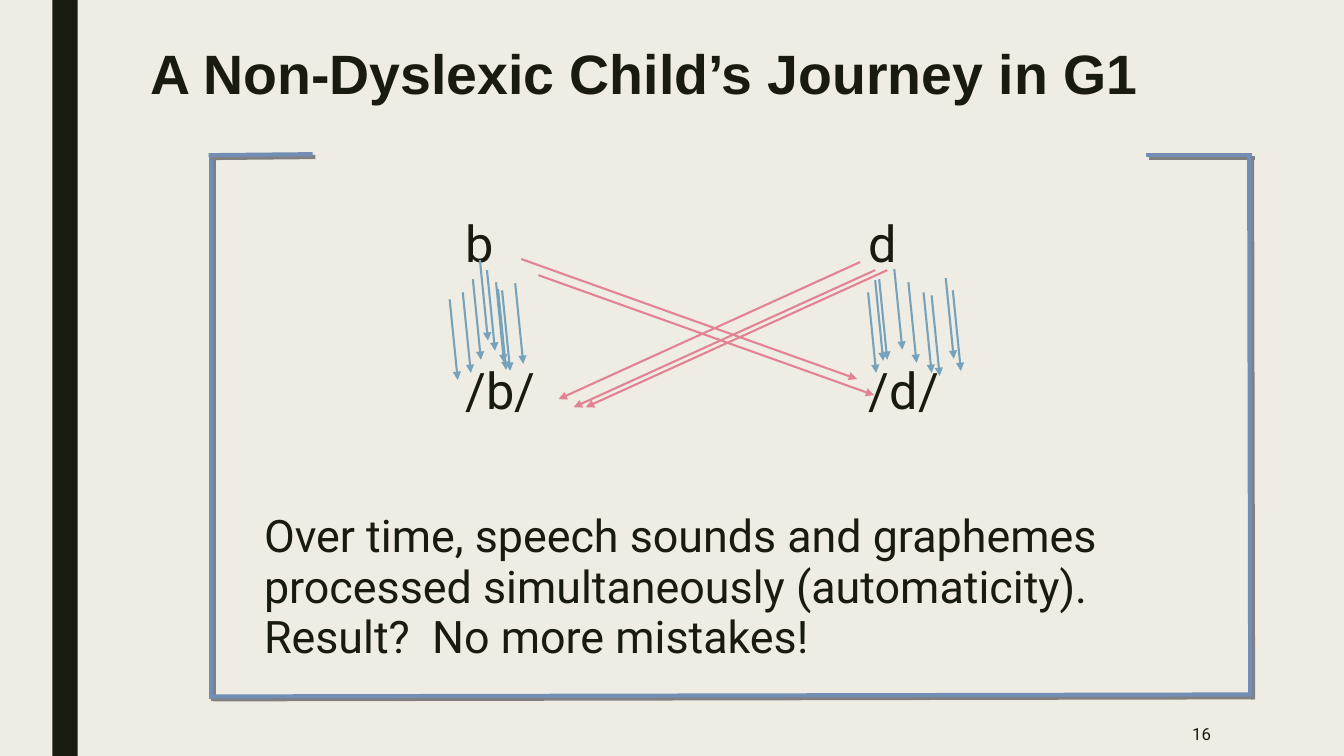
from lxml.etree import SubElement
from pptx import Presentation
from pptx.dml.color import RGBColor
from pptx.enum.shapes import MSO_CONNECTOR, MSO_SHAPE
from pptx.enum.text import MSO_ANCHOR, PP_ALIGN
from pptx.oxml.ns import qn
from pptx.util import Inches, Pt

INK, PAPER = "191B0E", "EFEDE3"
FRAME, BLUE, PINK = "728EB5", "77A2BB", "E28394"
COLS, ROWS = 13.33, 7.5


def rgb(code):
    return RGBColor.from_string(code)


def assign(item, values):
    for name, value in values.items():
        setattr(item, name, value)


class Board:
    """A slide on a grid of one-inch columns and rows."""

    def __init__(self, deck):
        assign(deck, {"slide_width": Inches(COLS), "slide_height": Inches(ROWS)})
        self.slide = deck.slides.add_slide(deck.slide_layouts[6])
        self.shapes = self.slide.shapes
        self.font = {"name": "Roboto", "bold": False}
        fill = self.slide.background.fill
        fill.solid()
        fill.fore_color.rgb = rgb(PAPER)

    def grid(self, *cells):
        return [Inches(cell) for cell in cells]

    def bar(self, box, color):
        shape = self.shapes.add_shape(MSO_SHAPE.RECTANGLE, *self.grid(*box))
        shape.shadow.inherit = False
        shape.fill.solid()
        shape.fill.fore_color.rgb = rgb(color)
        shape.line.fill.background()

    def stops(self, line, count):
        """Set a tab stop at each of the first columns."""
        tabs = SubElement(line._p.get_or_add_pPr(), qn("a:tabLst"))
        for col in range(1, count + 1):
            SubElement(tabs, qn("a:tab"), pos=str(Inches(col)), algn="l")

    def text(self, box, rows, para=None, frame=None, **font):
        """Write rows of (text, size, space before) in one box."""
        body = self.shapes.add_textbox(*self.grid(*box)).text_frame
        assign(body, {"word_wrap": True, **(frame or {})})
        for i, (words, size, before) in enumerate(rows):
            line = body.paragraphs[0] if i == 0 else body.add_paragraph()
            assign(line, {"space_before": Pt(before), **(para or {})})
            if "\t" in words:
                self.stops(line, words.count("\t"))
            run = line.add_run()
            run.text = words
            assign(run.font, {**self.font, "size": Pt(size), **font})
            run.font.color.rgb = rgb(INK)

    def line(self, start, end, color, width, group=None, arrow=False, shade=False):
        home = group.shapes if group else self.shapes
        link = home.add_connector(MSO_CONNECTOR.STRAIGHT, *self.grid(*start, *end))
        link.line.width = Pt(width)
        link.line.color.rgb = rgb(color)
        if arrow:
            SubElement(link.line._ln, qn("a:tailEnd"), type="triangle")
        effect = SubElement(link._element.spPr, qn("a:effectLst"))
        if shade:
            cast = SubElement(effect, qn("a:outerShdw"), blurRad="0",
                              dist=str(Pt(2.8)), dir="2700000", algn="ctr",
                              rotWithShape="0")
            SubElement(cast, qn("a:srgbClr"), val="808080")

    def arrows(self, starts, shift, color):
        """Draw parallel arrows that share one shift."""
        for x, y in starts:
            self.line((x, y), (x + shift[0], y + shift[1]), color, 1.5, arrow=True)


def main():
    deck = Presentation()
    board = Board(deck)
    board.bar((0.52, 0, 0.25, ROWS), INK)
    board.text((1.39, 0.41, 10.5, 0.98),
               [("A Non-Dyslexic Child’s Journey in G1", 39.6, 0)],
               para={"line_spacing": 0.89}, frame={"margin_top": Inches(0.06)},
               name="Arial", bold=True)
    board.text((2.52, 2.1, 9.28, 4.64), [
        ("\t\tb\t\t\t\td", 36, 0),
        ("\t\t/b/\t\t\t\t/d/", 36, 63),
        ("Over time, speech sounds and graphemes processed simultaneously "
         "(automaticity).  Result?  No more mistakes!", 32, 63),
    ], para={"line_spacing": 0.94, "space_after": Pt(2)})
    board.text((10.36, 7.06, 1.75, 0.44), [("16", 12, 0)],
               para={"alignment": PP_ALIGN.RIGHT},
               frame={"vertical_anchor": MSO_ANCHOR.MIDDLE})

    frame = board.shapes.add_group_shape()
    for start, end in [
        ((11.37, 1.54), (12.42, 1.54)),
        ((12.4, 6.91), (12.39, 1.53)),
        ((2.09, 6.93), (2.09, 1.53)),
        ((2.07, 1.54), (3.1, 1.53)),
        ((2.09, 6.91), (12.41, 6.89)),
    ]:
        board.line(start, end, FRAME, 3, group=frame, shade=True)

    match_b = [(4.46, 2.97), (4.59, 2.9), (4.69, 2.77), (4.76, 2.58), (4.83, 2.68),
               (4.92, 2.8), (4.94, 2.87), (4.98, 2.88), (5.11, 2.81)]
    match_d = [(8.61, 2.9), (8.68, 2.78), (8.72, 2.77), (8.87, 2.67), (9.01, 2.8),
               (9.16, 2.9), (9.24, 2.93), (9.38, 2.76), (9.45, 2.88)]
    board.arrows(match_b + match_d, (0.08, 0.8), BLUE)
    board.arrows([(5.17, 2.57), (5.34, 2.73)], (3.33, 1.19), PINK)
    board.arrows([(8.53, 2.6), (8.68, 2.68), (8.8, 2.68)], (-2.99, 1.36), PINK)
    deck.save("out.pptx")


if __name__ == "__main__":
    main()
